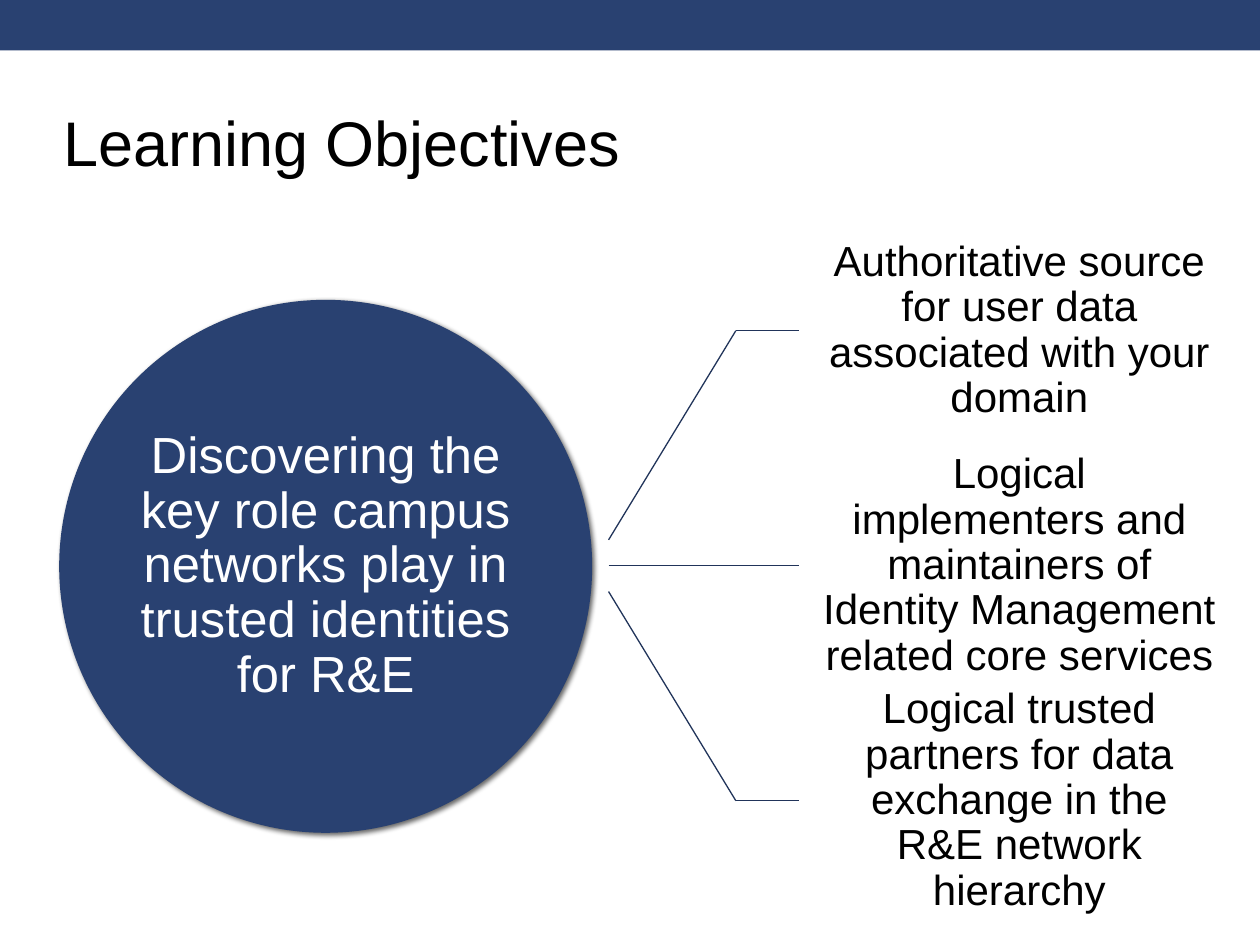
import pptx
import pptx.dml.color
import pptx.enum.shapes
import pptx.enum.text
import pptx.oxml
import pptx.oxml.ns
import pptx.util
from pptx.util import Inches

COLORS = {"navy": "294171", "line": "21345A", "black": "000000", "white": "FFFFFF"}
FONT = "Arial"
OBJECTIVES = [
    "Authoritative source for user data associated with your domain",
    "Logical implementers and maintainers of Identity Management related core services",
    "Logical trusted partners for data exchange in the R&E network hierarchy",
]
HUB_TEXT = "Discovering the key role campus networks play in trusted identities for R&E"
HUB_CENTER_Y = 4.49
BRANCH_STEP = 1.865
BRANCH_START_STEP = 0.205
BRANCH_X = (4.83, 5.84, 6.34)


def rgb(name):
    return pptx.dml.color.RGBColor.from_string(COLORS[name])


def add_effects(shape, content=""):
    """Give the shape its own effect list; an empty one means no shadow."""
    namespace = pptx.oxml.ns.nsdecls("a")
    effects = pptx.oxml.parse_xml(f"<a:effectLst {namespace}>{content}</a:effectLst>")
    shape._element.spPr.append(effects)


def set_text(shape, text, size, color, inset=0, centered=True, line_spacing=0.9):
    frame = shape.text_frame
    frame.text = text
    frame.word_wrap = True
    frame.auto_size = pptx.enum.text.MSO_AUTO_SIZE.NONE
    frame.vertical_anchor = pptx.enum.text.MSO_ANCHOR.MIDDLE
    frame.margin_left = frame.margin_right = Inches(inset)
    frame.margin_top = frame.margin_bottom = Inches(inset)
    paragraph = frame.paragraphs[0]
    alignments = pptx.enum.text.PP_ALIGN
    paragraph.alignment = alignments.CENTER if centered else alignments.LEFT
    paragraph.line_spacing = line_spacing
    font = paragraph.runs[0].font
    font.name = FONT
    font.size = pptx.util.Pt(size)
    font.color.rgb = rgb(color)


def add_filled_shape(slide, kind, left, top, width, height):
    shape = slide.shapes.add_shape(
        kind, Inches(left), Inches(top), Inches(width), Inches(height))
    shape.fill.solid()
    shape.fill.fore_color.rgb = rgb("navy")
    shape.line.fill.background()
    return shape


def add_text_box(slide, left, top, width, height, text, size, color, inset=0):
    box = slide.shapes.add_textbox(
        Inches(left), Inches(top), Inches(width), Inches(height))
    set_text(box, text, size, color, inset)


def add_line(slide, start, end):
    points = [Inches(value) for value in (*start, *end)]
    line = slide.shapes.add_connector(
        pptx.enum.shapes.MSO_CONNECTOR.STRAIGHT, *points)
    line.line.color.rgb = rgb("line")
    line.line.width = pptx.util.Pt(0.75)
    add_effects(line)


def add_title(slide, text):
    title = slide.shapes.title
    title.left, title.top = Inches(0.5), Inches(0.58)
    title.width, title.height = Inches(9), Inches(1.08)
    set_text(title, text, 36, "black", centered=False, line_spacing=1.0)


def add_hub(slide):
    circle = add_filled_shape(
        slide, pptx.enum.shapes.MSO_SHAPE.OVAL, 0.47, 2.38, 4.23, 4.23)
    add_effects(
        circle,
        f'<a:outerShdw blurRad="{pptx.util.Pt(3)}" dist="{pptx.util.Pt(2)}"'
        ' dir="2700000" rotWithShape="0">'
        f'<a:srgbClr val="{COLORS["black"]}"><a:alpha val="60000"/></a:srgbClr>'
        "</a:outerShdw>")
    add_text_box(slide, 1.09, 3, 2.99, 2.99, HUB_TEXT, 29, "white")


def add_branch(slide, offset, text):
    """Link the hub to one objective, offset steps below the middle."""
    start_x, bend_x, end_x = BRANCH_X
    start_y = HUB_CENTER_Y + offset * BRANCH_START_STEP
    end_y = HUB_CENTER_Y + offset * BRANCH_STEP
    add_line(slide, (start_x, start_y), (bend_x, end_y))
    add_line(slide, (bend_x, end_y), (end_x, end_y))
    add_text_box(slide, end_x, end_y - BRANCH_STEP / 2, 3.5, BRANCH_STEP,
                 text, 24, "black", inset=0.19)


def main():
    presentation = pptx.Presentation()
    presentation.slide_width = Inches(10)
    presentation.slide_height = Inches(7.5)
    slide = presentation.slides.add_slide(presentation.slide_layouts[5])
    band = add_filled_shape(
        slide, pptx.enum.shapes.MSO_SHAPE.RECTANGLE, 0, 0, 10, 0.4)
    band.shadow.inherit = False
    add_title(slide, "Learning Objectives")
    add_hub(slide)
    for offset, text in enumerate(OBJECTIVES, start=-1):
        add_branch(slide, offset, text)
    presentation.save("out.pptx")


if __name__ == "__main__":
    main()
